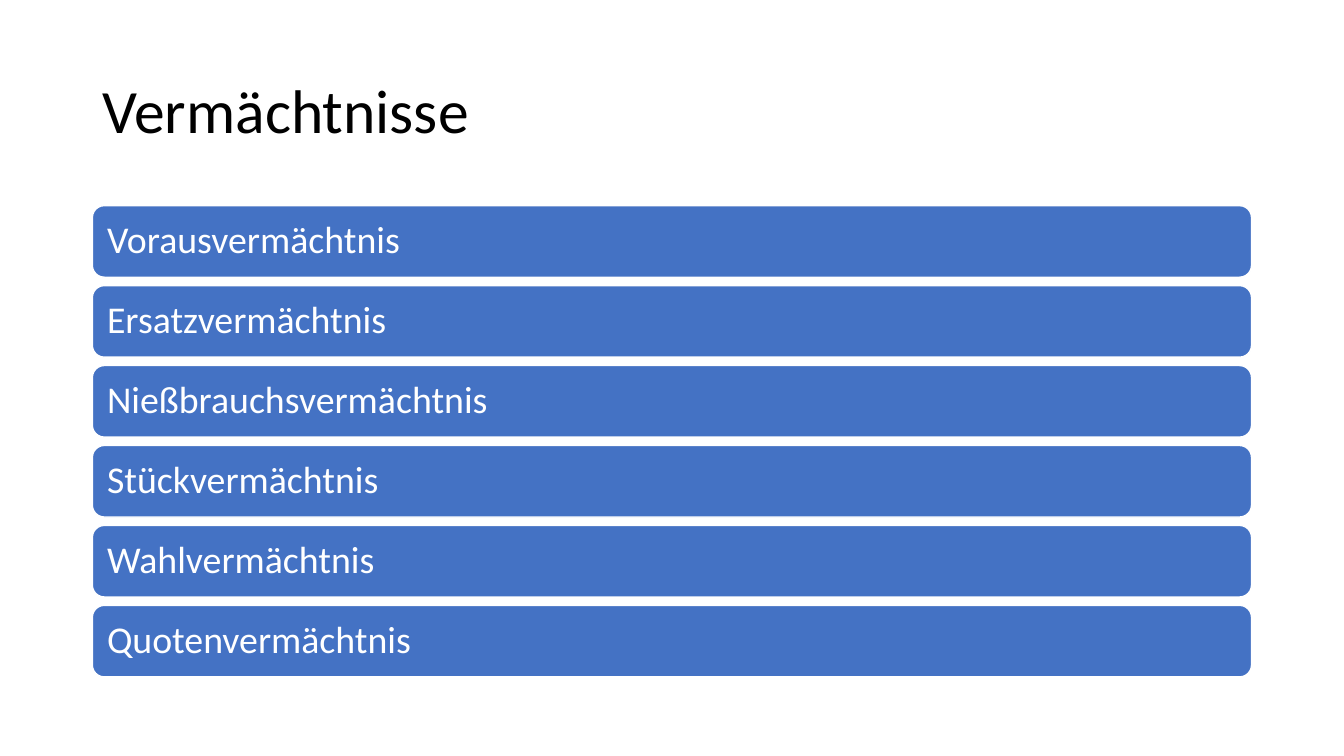
from dataclasses import dataclass

from pptx import Presentation
from pptx.dml.color import RGBColor
from pptx.enum.shapes import MSO_SHAPE as Shape
from pptx.enum.text import MSO_ANCHOR as Anchor, PP_ALIGN as Align
from pptx.util import Pt


@dataclass(frozen=True)
class Theme:
    """Colours, font and type sizes of the slide."""
    font: str = "Calibri"
    black: RGBColor = RGBColor(0x00, 0x00, 0x00)
    white: RGBColor = RGBColor(0xFF, 0xFF, 0xFF)
    blue: RGBColor = RGBColor(0x44, 0x72, 0xC4)
    title_size: int = 44
    bar_size: int = 27


THEME = Theme()
LEFT, WIDTH = 66, 828
BAR_TOP, BAR_HEIGHT, BAR_PITCH = 146.9, 51.1, 57.1
LEGACIES = (
    "Vorausvermächtnis",
    "Ersatzvermächtnis",
    "Nießbrauchsvermächtnis",
    "Stückvermächtnis",
    "Wahlvermächtnis",
    "Quotenvermächtnis",
)


def write_line(shape, text, size, color):
    """Write one left-aligned, vertically centred line of text."""
    frame = shape.text_frame
    frame.text = text
    frame.word_wrap = True
    frame.vertical_anchor = Anchor.MIDDLE
    paragraph = frame.paragraphs[0]
    paragraph.alignment = Align.LEFT
    paragraph.line_spacing = 0.9
    paragraph.font.name = THEME.font
    paragraph.font.size = Pt(size)
    paragraph.font.color.rgb = color


def place_title(slide, text):
    """Move and format the title placeholder."""
    title = slide.shapes.title
    title.left, title.top = Pt(LEFT), Pt(28.8)
    title.width, title.height = Pt(WIDTH), Pt(104.4)
    write_line(title, text, THEME.title_size, THEME.black)


def add_bar(slide, top, text):
    """Add a rounded bar with its label."""
    bar = slide.shapes.add_shape(
        Shape.ROUNDED_RECTANGLE, Pt(LEFT), Pt(top), Pt(WIDTH), Pt(BAR_HEIGHT)
    )
    bar.shadow.inherit = False
    bar.fill.solid()
    bar.fill.fore_color.rgb = THEME.blue
    bar.line.color.rgb = THEME.white
    bar.line.width = Pt(1)
    frame = bar.text_frame
    frame.margin_left = frame.margin_right = Pt(8)
    frame.margin_top = frame.margin_bottom = Pt(8)
    write_line(bar, text, THEME.bar_size, THEME.white)


def main():
    """Build and save the slide."""
    presentation = Presentation()
    presentation.slide_width, presentation.slide_height = Pt(960), Pt(540)
    title_only = presentation.slide_layouts.get_by_name("Title Only")
    slide = presentation.slides.add_slide(title_only)
    place_title(slide, "Vermächtnisse")
    for index, legacy in enumerate(LEGACIES):
        add_bar(slide, BAR_TOP + index * BAR_PITCH, legacy)
    presentation.save("out.pptx")


if __name__ == "__main__":
    main()
